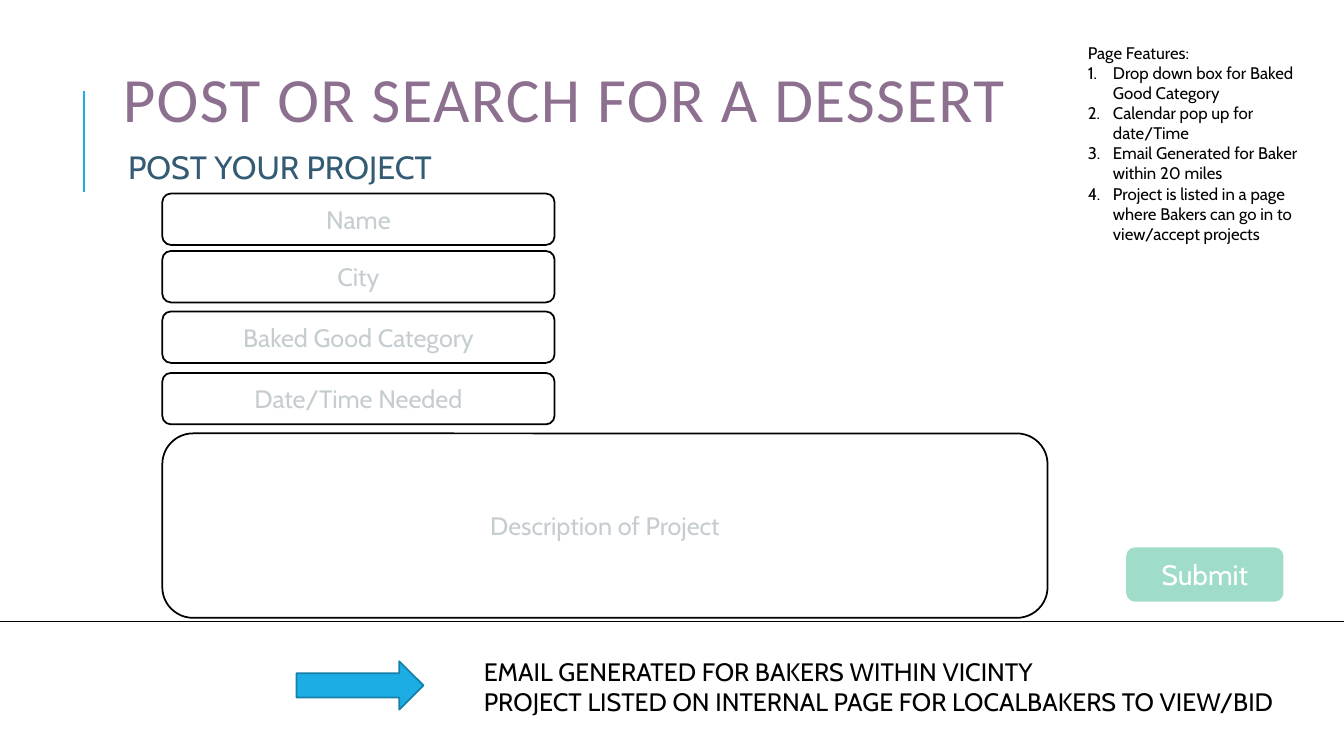
import pptx
import pptx.util
import pptx.dml.color
import pptx.enum.shapes
import pptx.enum.text
import pptx.oxml.ns
import lxml.etree

Inches, Pt = pptx.util.Inches, pptx.util.Pt
SHAPE = pptx.enum.shapes.MSO_SHAPE
ANCHOR = pptx.enum.text.MSO_ANCHOR
ALIGN = pptx.enum.text.PP_ALIGN
qn = pptx.oxml.ns.qn

# Content
TITLE = "POST OR SEARCH FOR A DESSERT\v"
SUBTITLE = "POST YOUR PROJECT"
FEATURES_HEADING = "Page Features:"
FEATURES = [
    "Drop down box for Baked Good Category",
    "Calendar pop up for date/Time",
    "Email Generated for Baker within 20 miles",
    "Project is listed in a page where Bakers can go in to view/accept projects",
]
OUTCOMES = [
    "EMAIL GENERATED FOR BAKERS WITHIN VICINTY",
    "PROJECT LISTED ON INTERNAL PAGE FOR LOCALBAKERS TO VIEW/BID",
]
# Form fields: label, top, width, height
FORM_LEFT = 1.61
FIELDS = [
    ("Name", 1.92, 3.89, 0.51),
    ("City", 2.49, 3.89, 0.51),
    ("Baked Good Category", 3.09, 3.89, 0.51),
    ("Date/Time Needed", 3.7, 3.89, 0.51),
    ("Description of Project", 4.3, 8.78, 1.83),
]

# Style
BODY_FONT, TITLE_FONT = "Cabin", "Calibri"
BLACK, WHITE, BLUE, DARK_BLUE = "000000", "FFFFFF", "1CADE4", "1580A9"
PLUM, NAVY, HINT, GREEN = "8D6F8F", "335B74", "C6CDD1", "42BA97"


def color(hex_value):
    return pptx.dml.color.RGBColor.from_string(hex_value)


def write(shape, lines, size, text_color, font=BODY_FONT, align=ALIGN.LEFT,
          anchor=ANCHOR.TOP, spacing=None):
    frame = shape.text_frame
    frame.word_wrap = True
    frame.vertical_anchor = anchor
    for index, line in enumerate(lines):
        paragraph = frame.paragraphs[0] if index == 0 else frame.add_paragraph()
        paragraph.text = line
        paragraph.alignment = align
        paragraph.line_spacing = spacing
        paragraph.font.name = font
        paragraph.font.size = Pt(size)
        paragraph.font.color.rgb = color(text_color)
    return frame


def add_text(slide, box, lines, size, text_color, **style):
    shape = slide.shapes.add_textbox(*map(Inches, box))
    return write(shape, lines, size, text_color, **style)


def add_box(slide, kind, box, fill, line=None):
    shape = slide.shapes.add_shape(kind, *map(Inches, box))
    shape.shadow.inherit = False
    shape.fill.solid()
    shape.fill.fore_color.rgb = color(fill)
    if line:
        shape.line.color.rgb = color(line)
        shape.line.width = Pt(1.25)
    else:
        shape.line.fill.background()
    return shape


def add_line(slide, ends, line_color, width):
    line = slide.shapes.add_connector(
        pptx.enum.shapes.MSO_CONNECTOR.STRAIGHT, *map(Inches, ends))
    line.line.color.rgb = color(line_color)
    line.line.width = Pt(width)
    lxml.etree.SubElement(line._element.spPr, qn("a:effectLst"))


def number(paragraph):
    properties = paragraph._p.get_or_add_pPr()
    properties.set("marL", str(Inches(0.25)))
    properties.set("indent", str(-Inches(0.25)))
    bullet = lxml.etree.Element(qn("a:buAutoNum"), type="arabicPeriod")
    properties.insert_element_before(bullet, "a:tabLst", "a:defRPr", "a:extLst")


def main():
    presentation = pptx.Presentation()
    presentation.slide_width = Inches(13.33)
    presentation.slide_height = Inches(7.5)
    slide = presentation.slides.add_slide(presentation.slide_layouts[6])

    # Heading with accent rule
    add_line(slide, (0.83, 1.9, 0.83, 0.9), BLUE, 1.5)
    title = add_text(slide, (1.12, 0.9, 10.63, 1.03), [TITLE], 45, PLUM,
                     font=TITLE_FONT, anchor=ANCHOR.MIDDLE, spacing=0.8)
    for run in title.paragraphs[0].runs:
        run._r.get_or_add_rPr().set("spc", "100")
    subtitle = add_text(slide, (1.12, 1.23, 5.2, 0.9), [SUBTITLE], 23, NAVY,
                        anchor=ANCHOR.MIDDLE, spacing=0.9)
    subtitle.margin_left = subtitle.margin_right = Inches(0.15)

    # Numbered page features
    features = add_text(slide, (10.69, 0.37, 2.51, 2.63),
                        [FEATURES_HEADING] + FEATURES, 12, BLACK)
    for paragraph in features.paragraphs[1:]:
        number(paragraph)

    # Form fields
    add_line(slide, (0, 6.17, 13.33, 6.17), BLACK, 0.75)
    for label, top, width, height in FIELDS:
        field = add_box(slide, SHAPE.ROUNDED_RECTANGLE,
                        (FORM_LEFT, top, width, height), WHITE, BLACK)
        write(field, [label], 18, HINT, align=ALIGN.CENTER, anchor=ANCHOR.MIDDLE)

    # Half-transparent submit button
    button = add_box(slide, SHAPE.ROUNDED_RECTANGLE, (11.17, 5.43, 1.56, 0.54), GREEN)
    write(button, ["Submit"], 20, WHITE, align=ALIGN.CENTER, anchor=ANCHOR.MIDDLE)
    fill_color = button._element.spPr.find(qn("a:solidFill"))[0]
    lxml.etree.SubElement(fill_color, qn("a:alpha"), val="50000")

    # What happens after submitting
    add_box(slide, SHAPE.RIGHT_ARROW, (2.94, 6.56, 1.26, 0.48), BLUE, DARK_BLUE)
    add_text(slide, (4.7, 6.46, 8.18, 0.71), OUTCOMES, 18, BLACK)

    presentation.save("out.pptx")


if __name__ == "__main__":
    main()
